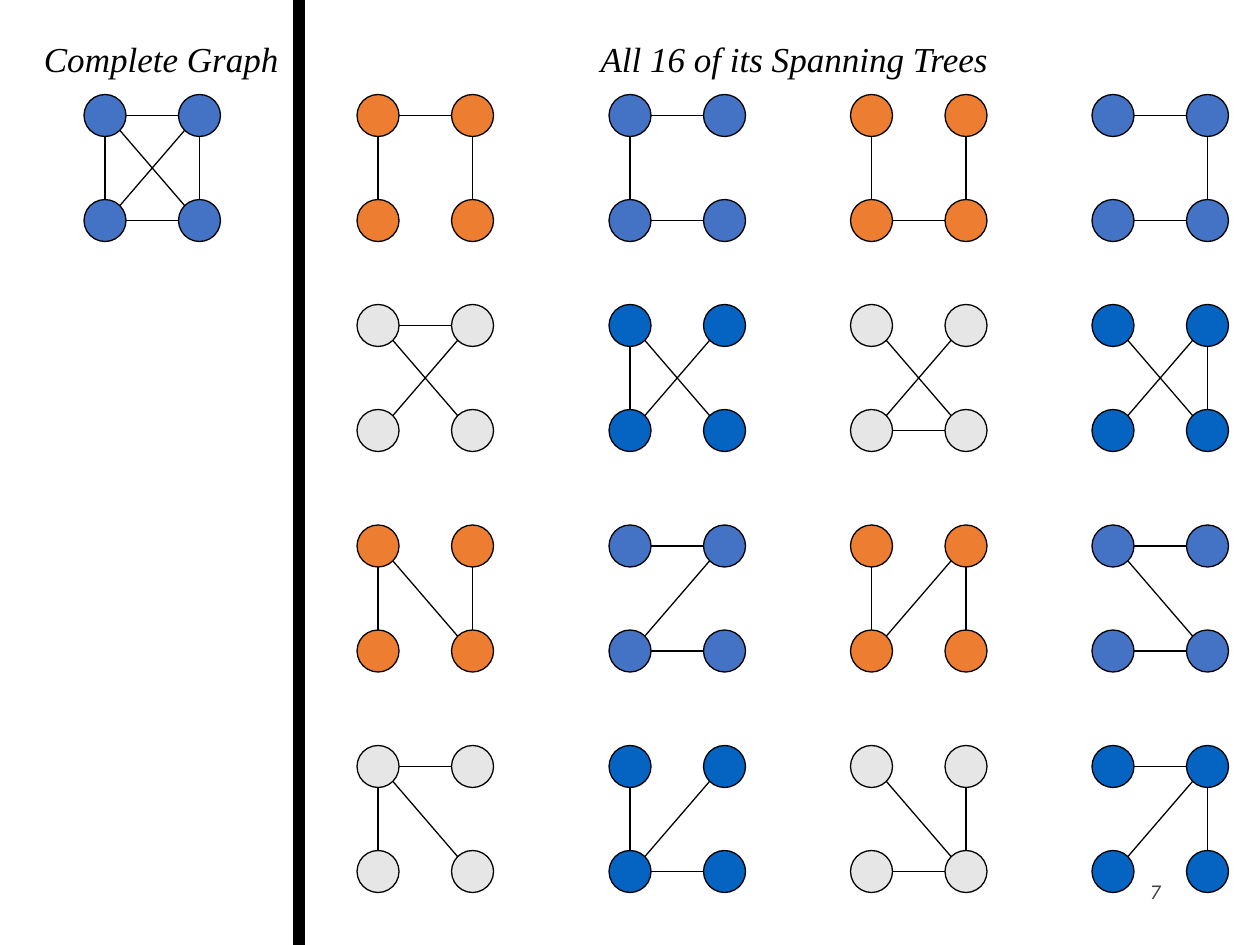
"""Draw the complete graph on four vertices beside its 16 spanning trees."""
from math import hypot

from lxml.etree import SubElement
from pptx import Presentation
from pptx.dml.color import RGBColor
from pptx.enum.shapes import MSO_CONNECTOR as Connector, MSO_SHAPE as Shape
from pptx.enum.text import MSO_ANCHOR as Anchor, PP_ALIGN as Align
from pptx.oxml.ns import qn
from pptx.util import Inches, Pt

COLORS = {
    "ink": "000000",
    "blue": "4472C4",
    "orange": "ED7D31",
    "grey": "E7E6E6",
    "deep": "0563C1",
    "muted": "404040",
}
COLUMNS, ROWS = 120, 90
DIAMETER = 4
CORNERS = {"nw": (2, 2), "ne": (11, 2), "sw": (2, 12), "se": (11, 12)}
EDGES = {
    "T": ("nw", "ne"),
    "L": ("nw", "sw"),
    "B": ("sw", "se"),
    "R": ("ne", "se"),
    "D": ("nw", "se"),
    "U": ("ne", "sw"),
}
TREE_COLUMNS = (34, 58, 81, 104)
TREE_ROWS = {
    9: (("orange", "blue"), "TLR TLB LBR TRB"),
    29: (("grey", "deep"), "TDU LDU BDU RDU"),
    50: (("orange", "blue"), "LRD TBU LRU TBD"),
    71: (("grey", "deep"), "TLD LBU BRD TRU"),
}
HEADING = {"name": "Times New Roman", "size": Pt(20), "italic": True, "bold": False}
PAGE_NUMBER = {"name": "Calibri", "size": Pt(12), "italic": True}


def grid(*units):
    """Convert twelfths of an inch to slide lengths."""
    return [Inches(unit / 12) for unit in units]


def color(key):
    """Return the named colour."""
    return RGBColor.from_string(COLORS[key])


def outline(line):
    """Give a line the thin ink stroke."""
    line.color.rgb = color("ink")
    line.width = Pt(0.75)


def add_block(slide, preset, fill, *box):
    """Add an outlined preset shape in a grid box."""
    block = slide.shapes.add_shape(preset, *grid(*box))
    block.shadow.inherit = False
    block.fill.solid()
    block.fill.fore_color.rgb = color(fill)
    outline(block.line)


def add_edge(slide, start, end):
    """Join two vertices from rim to rim at the nearest compass points."""
    toward = [(b > a) - (b < a) for a, b in zip(start, end)]
    reach = DIAMETER / 2 / hypot(*toward)
    begin = [a + reach * step for a, step in zip(start, toward)]
    finish = [b - reach * step for b, step in zip(end, toward)]
    edge = slide.shapes.add_connector(Connector.STRAIGHT, *grid(*begin, *finish))
    outline(edge.line)
    SubElement(edge._element.spPr, qn("a:effectLst"))


def add_graph(slide, left, top, fill, edges):
    """Draw four vertices and the edges named by letter."""
    centers = {name: (left + x, top + y) for name, (x, y) in CORNERS.items()}
    for x, y in centers.values():
        radius = DIAMETER / 2
        add_block(slide, Shape.OVAL, fill, x - radius, y - radius, DIAMETER, DIAMETER)
    for letter in edges:
        start, end = EDGES[letter]
        add_edge(slide, centers[start], centers[end])


def write_text(holder, box, text, style, ink="ink", align=Align.LEFT, anchor=Anchor.TOP):
    """Place a text holder on the grid and format its single line."""
    holder.left, holder.top, holder.width, holder.height = grid(*box)
    frame = holder.text_frame
    frame.word_wrap = True
    frame.vertical_anchor = anchor
    line = frame.paragraphs[0]
    line.alignment = align
    run = line.add_run()
    run.text = text
    for attribute, value in style.items():
        setattr(run.font, attribute, value)
    run.font.color.rgb = color(ink)


def add_label(slide, box, *args, **kwargs):
    """Add a text box with one formatted line."""
    write_text(slide.shapes.add_textbox(*grid(*box)), box, *args, **kwargs)


def main():
    """Build and save the slide."""
    deck = Presentation()
    deck.slide_width, deck.slide_height = grid(COLUMNS, ROWS)
    slide = deck.slides.add_slide(deck.slide_layouts[5])

    write_text(slide.shapes.title, (56, 3, 42, 5.2), "All 16 of its Spanning Trees", HEADING)
    add_label(slide, (3, 3, 25, 5.2), "Complete Graph", HEADING)
    add_graph(slide, 8, 9, "blue", EDGES)
    for top, (fills, trees) in TREE_ROWS.items():
        for left, fill, edges in zip(TREE_COLUMNS, fills * 2, trees.split()):
            add_graph(slide, left, top, fill, edges)
    add_block(slide, Shape.RECTANGLE, "ink", 28, 0, 1, ROWS)
    add_label(slide, (84.7, 82.8, 27, 4.2), "7", PAGE_NUMBER,
              ink="muted", align=Align.RIGHT, anchor=Anchor.MIDDLE)
    deck.save("out.pptx")


if __name__ == "__main__":
    main()
